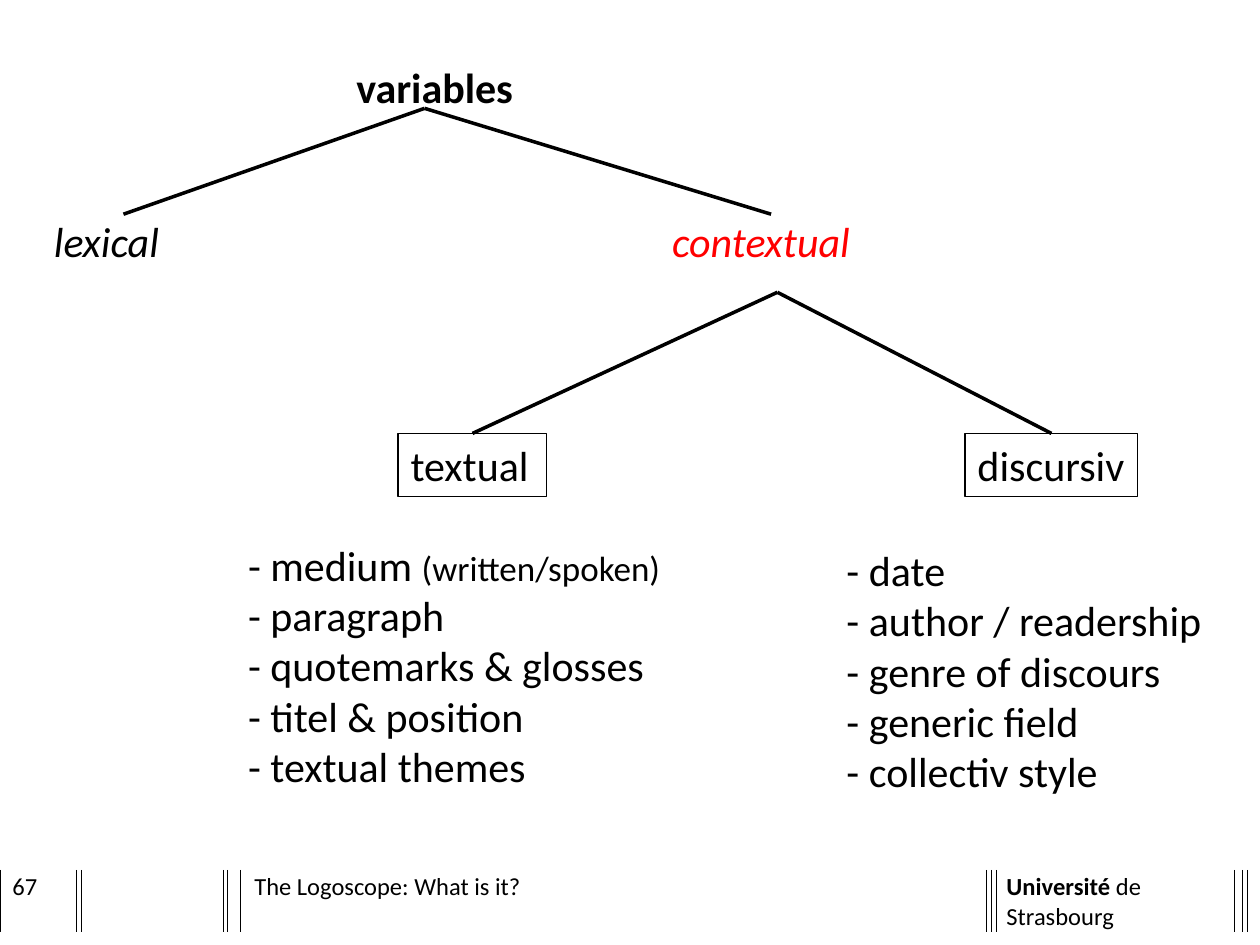
from dataclasses import dataclass

from lxml.etree import SubElement
from pptx import Presentation
from pptx.dml.color import RGBColor
from pptx.enum.shapes import MSO_CONNECTOR, MSO_SHAPE
from pptx.enum.text import MSO_ANCHOR, PP_ALIGN
from pptx.oxml.ns import qn
from pptx.util import Inches, Pt

BLACK = RGBColor(0, 0, 0)
WHITE = RGBColor(255, 255, 255)
RED = RGBColor(255, 0, 0)
FONT = "Calibri"
BODY_SIZE = 24
NOTE_SIZE = 20
FOOTER_SIZE = 14

FOOTER_TOP = 6.62
FOOTER_COLUMNS = [0.61, 0.04, 1.12, 0.03, 0.1, 5.92, 0.04, 0.04, 1.89, 0.06, 0.04, 0.11]
FOOTER_ROWS = [0.29, 0.49, 0.27]
UNIVERSITY_COLUMN = 8


@dataclass
class Label:
    lines: list[str]
    left: float
    top: float
    width: float
    height: float
    size: int = BODY_SIZE
    color: RGBColor = BLACK
    bold: bool = False
    italic: bool = False
    wrap: bool = False
    align: PP_ALIGN = PP_ALIGN.LEFT
    anchor: MSO_ANCHOR = MSO_ANCHOR.TOP


@dataclass
class Branch:
    """A line down from a parent; it may join the top of a box."""
    start: tuple[float, float]
    end: tuple[float, float]
    target: object = None


def write_label(shape, label: Label) -> None:
    frame = shape.text_frame
    frame.word_wrap = label.wrap
    frame.vertical_anchor = label.anchor
    for index, line in enumerate(label.lines):
        para = frame.add_paragraph() if index else frame.paragraphs[0]
        para.alignment = label.align
        para.font.name = FONT
        para.font.size = Pt(label.size)
        para.font.bold = label.bold
        para.font.italic = label.italic
        para.font.color.rgb = label.color
        para.add_run().text = line


def frame_of(label: Label) -> list:
    return [Inches(n) for n in (label.left, label.top, label.width, label.height)]


def add_label(page, label: Label):
    box = page.shapes.add_textbox(*frame_of(label))
    write_label(box, label)
    return box


def add_outlined_box(page, label: Label):
    box = page.shapes.add_shape(MSO_SHAPE.RECTANGLE, *frame_of(label))
    box.shadow.inherit = False
    box.fill.background()
    box.line.color.rgb = BLACK
    box.line.width = Pt(0.75)
    write_label(box, label)
    return box


def add_branch(page, branch: Branch) -> None:
    points = [Inches(n) for n in branch.start + branch.end]
    line = page.shapes.add_connector(MSO_CONNECTOR.STRAIGHT, *points)
    line.line.color.rgb = BLACK
    line.line.width = Pt(2)
    SubElement(line._element.spPr, qn("a:effectLst"))
    if branch.target is not None:
        line.end_connect(branch.target, 0)


def set_borders(cell) -> None:
    properties = cell._tc.get_or_add_tcPr()
    for position, side in enumerate(("a:lnL", "a:lnR", "a:lnT", "a:lnB")):
        line = SubElement(properties, qn(side), w=str(Pt(0.5)))
        fill = SubElement(line, qn("a:solidFill"))
        SubElement(fill, qn("a:srgbClr"), val=str(BLACK))
        properties.insert(position, line)


def add_footer_table(page) -> None:
    frame = page.shapes.add_table(
        len(FOOTER_ROWS), len(FOOTER_COLUMNS), 0, Inches(FOOTER_TOP),
        Inches(sum(FOOTER_COLUMNS)), Inches(sum(FOOTER_ROWS)))
    table = frame.table
    table.first_row = table.horz_banding = False
    for column, width in zip(table.columns, FOOTER_COLUMNS):
        column.width = Inches(width)
    for row, height in zip(table.rows, FOOTER_ROWS):
        row.height = Inches(height)
        for cell in row.cells:
            cell.fill.solid()
            cell.fill.fore_color.rgb = WHITE
            cell.margin_left = cell.margin_right = 0
            cell.margin_top = cell.margin_bottom = 0
            cell.text_frame.paragraphs[0].font.size = Pt(FOOTER_SIZE)
    for cell in table.rows[1].cells:
        set_borders(cell)
    for row in (0, 2):
        table.cell(row, 0).merge(table.cell(row, len(FOOTER_COLUMNS) - 1))

    university = table.cell(1, UNIVERSITY_COLUMN)
    university.margin_left = Inches(0.08)
    university.margin_top = Inches(0.01)
    para = university.text_frame.paragraphs[0]
    para.font.name = FONT
    para.font.color.rgb = BLACK
    for text, bold in (("Université", True), (" de Strasbourg", False)):
        span = para.add_run()
        span.text = text
        span.font.bold = bold


def main() -> None:
    deck = Presentation()
    deck.slide_width, deck.slide_height = Inches(10), Inches(7.5)
    page = deck.slides.add_slide(deck.slide_layouts[6])

    add_footer_table(page)
    for text, left, width in (("67", 0, 0.61), ("The Logoscope: What is it?", 1.92, 5.92)):
        add_label(page, Label([text], left, 6.88, width, 0.3, FOOTER_SIZE,
                              wrap=True, anchor=MSO_ANCHOR.MIDDLE))

    add_label(page, Label(["variables"], 2.73, 0.44, 1.48, 0.38, bold=True))
    add_label(page, Label(["lexical"], 0.33, 1.66, 1.13, 0.38, italic=True))
    add_label(page, Label(["contextual"], 5.06, 1.66, 1.96, 0.5, color=RED,
                          italic=True, wrap=True, align=PP_ALIGN.CENTER))
    textual = add_outlined_box(page, Label(["textual"], 3.16, 3.44, 1.18, 0.5, wrap=True))
    discursive = add_outlined_box(page, Label(["discursiv"], 7.66, 3.44, 1.37, 0.5, wrap=True))

    root, contextual = (3.37, 0.86), (6.17, 2.32)
    for branch in (
        Branch(root, (0.98, 1.7)),
        Branch(root, (6.12, 1.7)),
        Branch(contextual, (3.75, 3.44), textual),
        Branch(contextual, (8.35, 3.44), discursive),
    ):
        add_branch(page, branch)

    textual_list = add_label(page, Label(
        ["- medium ", "- paragraph", "- quotemarks & glosses",
         "- titel & position", "- textual themes"], 1.87, 4.23, 3.52, 2.12))
    note = textual_list.text_frame.paragraphs[0].add_run()
    note.text = "(written/spoken)"
    note.font.size = Pt(NOTE_SIZE)
    add_label(page, Label(
        ["- date", "- author / readership", "- genre of discours",
         "- generic field", "- collectiv style"], 6.62, 4.27, 3.06, 2.12))

    deck.save("out.pptx")


if __name__ == "__main__":
    main()
